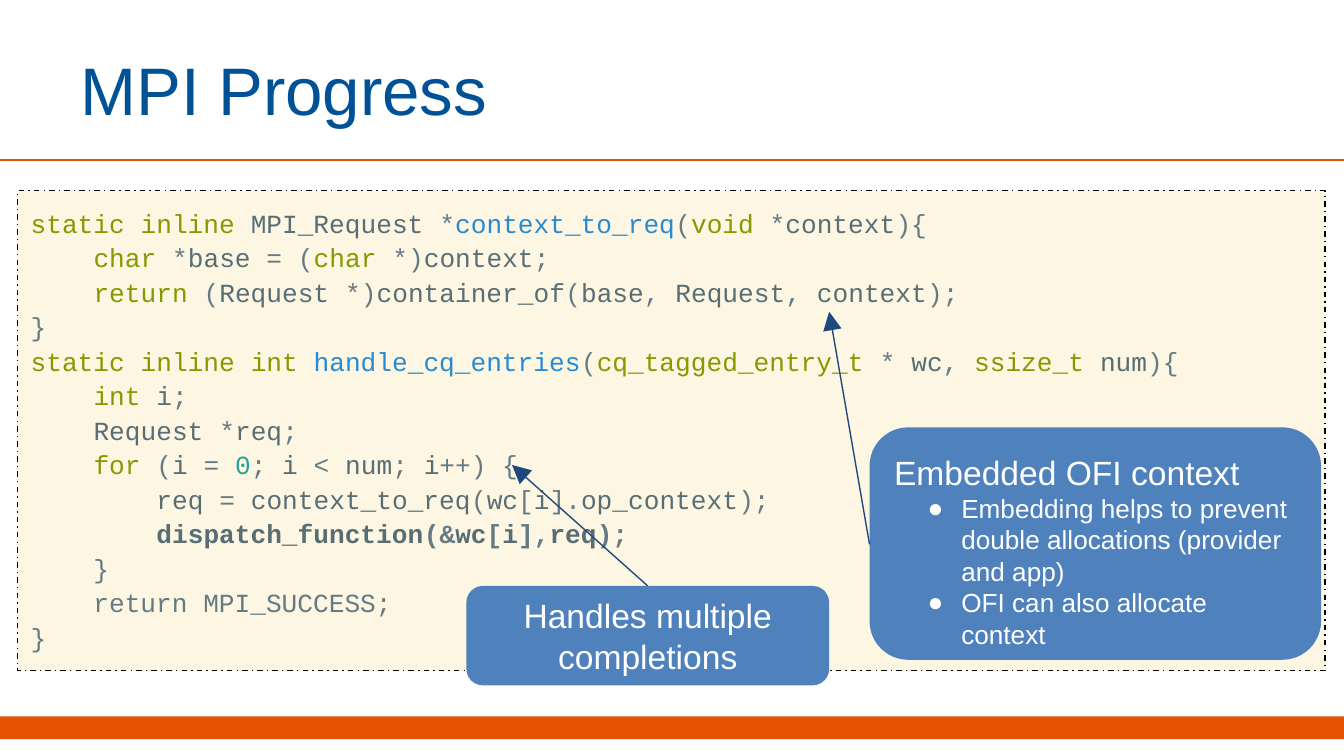
from copy import deepcopy
from itertools import groupby

from lxml import etree
from pptx import Presentation
from pptx.dml.color import RGBColor
from pptx.enum.dml import MSO_LINE
from pptx.enum.shapes import MSO_CONNECTOR, MSO_SHAPE
from pptx.enum.text import MSO_ANCHOR, PP_ALIGN
from pptx.oxml.ns import qn
from pptx.util import Inches, Pt

RECTANGLE, ROUNDED = MSO_SHAPE.RECTANGLE, MSO_SHAPE.ROUNDED_RECTANGLE
TOP, MIDDLE = MSO_ANCHOR.TOP, MSO_ANCHOR.MIDDLE
LEFT, CENTER = PP_ALIGN.LEFT, PP_ALIGN.CENTER

ORANGE = RGBColor(0xE5, 0x53, 0x02)
TITLE_BLUE = RGBColor(0x00, 0x51, 0x95)
CALLOUT_BLUE = RGBColor(0x4F, 0x81, 0xBD)
ARROW_BLUE = RGBColor(0x1F, 0x49, 0x7D)
WHITE = RGBColor(0xFF, 0xFF, 0xFF)
BLACK = RGBColor(0x00, 0x00, 0x00)
CODE_BACK = RGBColor(0xFD, 0xF6, 0xE3)
KEYWORD = RGBColor(0x85, 0x99, 0x00)
FUNCTION = RGBColor(0x26, 0x8B, 0xD2)
NUMBER = RGBColor(0x2A, 0xA1, 0x98)
NAME = RGBColor(0x58, 0x6E, 0x75)
PLAIN = RGBColor(0x65, 0x7B, 0x83)

SLIDE_WIDTH = 10
SLIDE_HEIGHT = SLIDE_WIDTH * 9 / 16

TITLE = "MPI Progress"
FUNCTIONS = [
    [
        "static inline MPI_Request *context_to_req(void *context){",
        "    char *base = (char *)context;",
        "    return (Request *)container_of(base, Request, context);",
        "}",
    ],
    [
        "static inline int handle_cq_entries(cq_tagged_entry_t * wc, ssize_t num){",
        "    int i;",
        "    Request *req;",
        "    for (i = 0; i < num; i++) {",
        "        req = context_to_req(wc[i].op_context);",
        "        dispatch_function(&wc[i],req);",
        "    }",
        "    return MPI_SUCCESS;",
        "}",
    ],
]
KEYWORDS = {"static", "inline", "void", "char", "return", "int", "for",
            "cq_tagged_entry_t", "ssize_t"}
DEFINED = {"context_to_req", "handle_cq_entries"}
BOLD_CALL = "dispatch_function"
UNCOLOURED = "MPI_SUCCESS"

CONTEXT_HEADING = "Embedded OFI context"
CONTEXT_BULLETS = [
    "Embedding helps to prevent double allocations (provider and app)",
    "OFI can also allocate context",
]
COMPLETIONS = "Handles multiple completions"
ARROWS = [((6.47, 4.05), (6.17, 2.32)), ((4.82, 4.36), (3.81, 3.46))]


def add_panel(slide, kind, area, fill):
    panel = slide.shapes.add_shape(kind, *map(Inches, area))
    panel.shadow.inherit = False
    panel.fill.solid()
    panel.fill.fore_color.rgb = fill
    panel.line.fill.background()
    return panel


def prepare_text(shape, anchor):
    frame = shape.text_frame
    frame.word_wrap = True
    frame.vertical_anchor = anchor
    frame.margin_left = frame.margin_right = Inches(0.1)
    frame.margin_top = frame.margin_bottom = Inches(0.1)
    return frame


def next_para(frame, index, align=LEFT):
    para = frame.add_paragraph() if index else frame.paragraphs[0]
    para.alignment = align
    return para


def add_span(para, text, size, colour, font="Arial", bold=False):
    span = para.add_run()
    span.text = text
    span.font.size = Pt(size)
    span.font.name = font
    span.font.bold = bold
    span.font.color.rgb = colour


def add_break(para):
    """Add a line break that keeps the format of the span before it."""
    style = deepcopy(para.runs[-1]._r.rPr)
    para.add_line_break()
    para._p[-1].append(style)


def add_bullet(para, size):
    props = para._p.get_or_add_pPr()
    props.set("marL", str(Inches(0.5)))
    props.set("indent", str(Inches(-0.25)))
    colour = etree.SubElement(props, qn("a:buClr"))
    etree.SubElement(colour, qn("a:srgbClr"), val=str(WHITE))
    etree.SubElement(props, qn("a:buSzPts"), val=str(size * 100))
    etree.SubElement(props, qn("a:buFont"), typeface="Arial")
    etree.SubElement(props, qn("a:buChar"), char="●")


def add_line(slide, start, end, colour, width, arrow=False):
    line = slide.shapes.add_connector(
        MSO_CONNECTOR.STRAIGHT, *map(Inches, start + end))
    line.line.color.rgb = colour
    line.line.width = Pt(width)
    if arrow:
        etree.SubElement(line.line._get_or_add_ln(), qn("a:tailEnd"),
                         type="triangle", w="lg", len="lg")
    etree.SubElement(line._element.spPr, qn("a:effectLst"))


def is_word_char(char):
    return char.isalnum() or char == "_"


def token_colour(token, line):
    if UNCOLOURED in line or not is_word_char(token[0]):
        return PLAIN
    if token in KEYWORDS:
        return KEYWORD
    if token in DEFINED and line.startswith("static"):
        return FUNCTION
    return NUMBER if token.isdigit() else NAME


def add_code(slide):
    panel = add_panel(slide, RECTANGLE, (0.13, 1.42, 9.73, 3.57), CODE_BACK)
    panel.line.color.rgb = BLACK
    panel.line.width = Pt(0.75)
    panel.line.dash_style = MSO_LINE.DASH_DOT
    frame = prepare_text(panel, TOP)
    for index, lines in enumerate(FUNCTIONS):
        para = next_para(frame, index)
        para.line_spacing = 1.1
        for number, line in enumerate(lines):
            if number:
                add_break(para)
            for _, chars in groupby(line, is_word_char):
                token = "".join(chars)
                add_span(para, token, 14, token_colour(token, line),
                         "Courier New", BOLD_CALL in line)


def add_context_callout(slide):
    callout = add_panel(slide, ROUNDED, (6.47, 3.18, 3.36, 1.73), CALLOUT_BLUE)
    frame = prepare_text(callout, TOP)
    add_span(next_para(frame, 0), CONTEXT_HEADING, 18, WHITE)
    for index, text in enumerate(CONTEXT_BULLETS, 1):
        para = next_para(frame, index)
        add_bullet(para, 14)
        add_span(para, text, 14, WHITE)


def add_completions_callout(slide):
    callout = add_panel(slide, ROUNDED, (3.47, 4.36, 2.7, 0.74), CALLOUT_BLUE)
    frame = prepare_text(callout, MIDDLE)
    add_span(next_para(frame, 0, CENTER), COMPLETIONS, 18, WHITE)


def main():
    deck = Presentation()
    deck.slide_width, deck.slide_height = Inches(SLIDE_WIDTH), Inches(SLIDE_HEIGHT)
    slide = deck.slides.add_slide(deck.slide_layouts[6])

    add_panel(slide, RECTANGLE, (0, 5.33, SLIDE_WIDTH, 0.17), ORANGE)
    add_line(slide, (0, 1.19), (SLIDE_WIDTH, 1.19), ORANGE, 1)
    title = slide.shapes.add_textbox(*map(Inches, (0.5, 0.19, 8.17, 0.94)))
    add_span(next_para(prepare_text(title, MIDDLE), 0), TITLE, 36, TITLE_BLUE)

    add_code(slide)
    add_context_callout(slide)
    (context_arrow, completions_arrow) = ARROWS
    add_line(slide, *context_arrow, ARROW_BLUE, 0.75, arrow=True)
    add_completions_callout(slide)
    add_line(slide, *completions_arrow, ARROW_BLUE, 0.75, arrow=True)
    deck.save("out.pptx")


if __name__ == "__main__":
    main()
